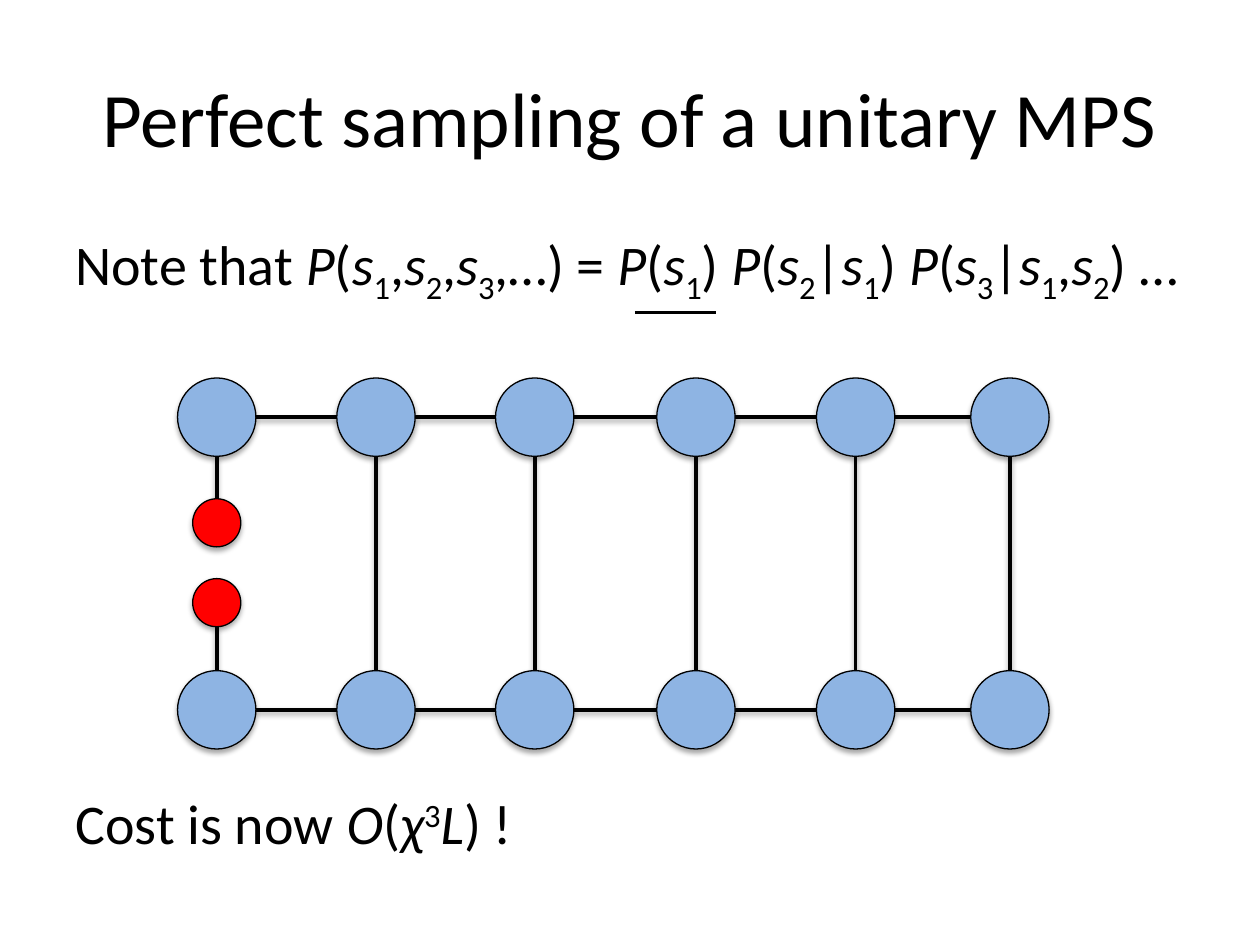
from lxml import etree
from pptx import Presentation
from pptx.dml.color import RGBColor
from pptx.enum import shapes, text
from pptx.oxml.ns import qn
from pptx.util import Cm, Pt

FONT = "Calibri"
COLORS = {"ink": "000000", "tensor": "8EB4E3", "sample": "FF0000"}

# Runs are (text, style); styles are "", "italic", "sub" and "sup".
TITLE = [("Perfect sampling of a unitary MPS", "")]
S1, S2, S3 = ([("s", "italic"), (index, "sub")] for index in "123")
P = [("P", "italic"), ("(", "")]
COMMA, BAR, CLOSE = [(",", "")], [("|", "")], [(") ", "")]
CHAIN_RULE = [
    ("Note that ", ""), *P, *S1, *COMMA, *S2, *COMMA, *S3, (",…) = ", ""),
    *P, *S1, *CLOSE, *P, *S2, *BAR, *S1, *CLOSE,
    *P, *S3, *BAR, *S1, *COMMA, *S2, (") …", ""),
]
COST = [("Cost is now ", ""), ("O", "italic"), ("(", ""), ("χ", "italic"),
        ("3", "sup"), ("L", "italic"), (") !", "")]

# Text boxes: runs, size, alignment, left, top, width, height (cm)
TEXTS = [
    (TITLE, 44, text.PP_ALIGN.CENTER, 1.27, 0.76, 22.86, 3.18),
    (CHAIN_RULE, 32, text.PP_ALIGN.LEFT, 1.27, 4.5, 23.37, 1.7),
    (COST, 32, text.PP_ALIGN.LEFT, 1.27, 15.77, 23.37, 1.7),
]

# Network, in cm: centres of the tensors and of the sampled states
SITES = [4.37, 7.58, 10.78, 14.03, 17.25, 20.36]
KET, BRA = 8.41, 14.31
KET_SAMPLE, BRA_SAMPLE = 10.54, 12.15
TENSOR_SIZE, SAMPLE_SIZE = 1.58, 0.97
UNDERLINE = (12.8, 6.3, 14.43, 6.3)

BASELINES = {"sub": "-25000", "sup": "30000"}


def color(name):
    return RGBColor.from_string(COLORS[name])


def set_effects(item, shadow):
    """Replace inherited effects by a soft shadow below, or by none."""
    effects = etree.SubElement(item._element.spPr, qn("a:effectLst"))
    if shadow:
        outer = etree.SubElement(effects, qn("a:outerShdw"), blurRad=str(Pt(3.1)),
                                 dist=str(Pt(1.8)), dir="5400000", rotWithShape="0")
        ink = etree.SubElement(outer, qn("a:srgbClr"), val=COLORS["ink"])
        etree.SubElement(ink, qn("a:alpha"), val="35000")


def add_text(page, runs, size, align, *place):
    box = page.shapes.add_textbox(*map(Cm, place))
    frame = box.text_frame
    frame.word_wrap = True
    frame.vertical_anchor = (text.MSO_ANCHOR.MIDDLE if runs is TITLE
                             else text.MSO_ANCHOR.TOP)
    para = frame.paragraphs[0]
    para.alignment = align
    for words, style in runs:
        span = para.add_run()
        span.text = words
        span.font.name = FONT
        span.font.size = Pt(size)
        span.font.italic = style == "italic"
        span.font.color.rgb = color("ink")
        if style in BASELINES:
            span.font._element.set("baseline", BASELINES[style])


def add_circle(page, x, y, size, fill):
    circle = page.shapes.add_shape(shapes.MSO_SHAPE.OVAL, Cm(x - size / 2),
                                   Cm(y - size / 2), Cm(size), Cm(size))
    circle.fill.solid()
    circle.fill.fore_color.rgb = color(fill)
    circle.line.color.rgb = color("ink")
    circle.line.width = Pt(0.75)
    set_effects(circle, shadow=True)


def add_line(page, ends, shadow=True):
    line = page.shapes.add_connector(shapes.MSO_CONNECTOR.STRAIGHT, *map(Cm, ends))
    line.line.color.rgb = color("ink")
    line.line.width = Pt(2)
    set_effects(line, shadow)


def add_network(page):
    radius, sample_radius = TENSOR_SIZE / 2, SAMPLE_SIZE / 2
    first, *others = SITES
    for y in (KET, BRA):
        for left, right in zip(SITES, others):
            add_line(page, (left + radius, y, right - radius, y))
    for x in others:
        add_line(page, (x, KET + radius, x, BRA - radius))
    add_line(page, (first, KET + radius, first, KET_SAMPLE - sample_radius))
    add_line(page, (first, BRA_SAMPLE + sample_radius, first, BRA - radius))
    for y in (KET, BRA):
        for x in SITES:
            add_circle(page, x, y, TENSOR_SIZE, "tensor")
    for y in (KET_SAMPLE, BRA_SAMPLE):
        add_circle(page, first, y, SAMPLE_SIZE, "sample")


def main():
    deck = Presentation()
    deck.slide_width, deck.slide_height = Cm(25.4), Cm(19.05)
    page = deck.slides.add_slide(deck.slide_layouts[6])
    for entry in TEXTS:
        add_text(page, *entry)
    add_network(page)
    add_line(page, UNDERLINE, shadow=False)
    deck.save("out.pptx")


if __name__ == "__main__":
    main()
